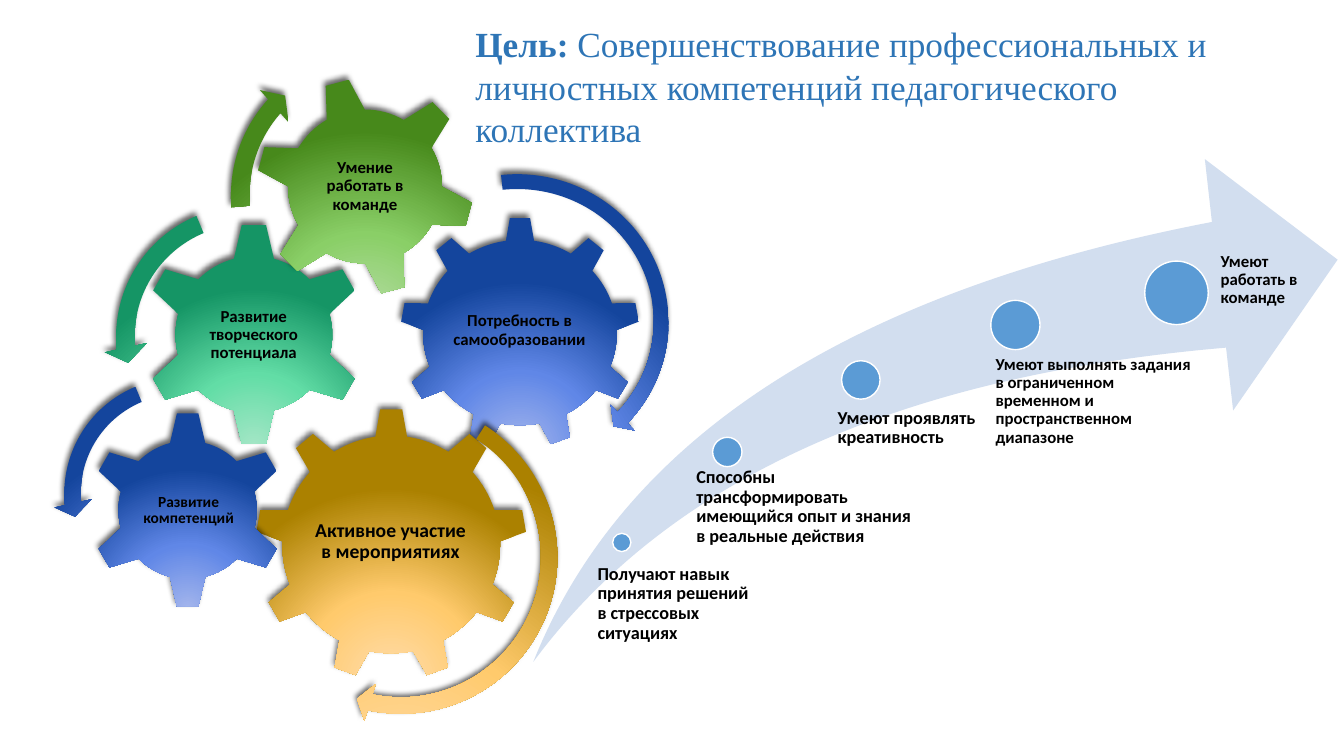
import pptx
import pptx.util
import pptx.dml.color
import pptx.enum.shapes
import pptx.enum.text
import pptx.oxml
import pptx.oxml.ns

Cm, Pt = pptx.util.Cm, pptx.util.Pt
RGB = pptx.dml.color.RGBColor.from_string
SHAPE = pptx.enum.shapes.MSO_SHAPE
ANCHOR = pptx.enum.text.MSO_ANCHOR
ALIGN = pptx.enum.text.PP_ALIGN

COLORS = {
    "title": "2E75B6", "text": "000000", "swoosh": "D2DEEF",
    "dot": "5B9BD5", "dot_edge": "FFFFFF", "shadow": "000000",
    "blue": ("A3B5EC", "6087E7", "14459D"),
    "teal": ("A4E6C6", "62DDA6", "159565"),
    "green": ("B7DDA7", "8ACF67", "47891B"),
    "gold": ("FFDCAB", "FFCA6C", "AB8100"),
}

presentation = pptx.Presentation()
presentation.slide_width, presentation.slide_height = Cm(33.87), Cm(19.05)
slide = presentation.slides.add_slide(presentation.slide_layouts[6])


def add_glossy(kind, box, tone, rotation=0, adjustments=()):
    """Add a shape with a radial gradient and a soft shadow."""
    glossy = slide.shapes.add_shape(kind, *map(Cm, box))
    glossy.rotation = rotation
    for index, value in enumerate(adjustments):
        glossy.adjustments[index] = value
    glossy.line.fill.background()
    stops = "".join(
        f'<a:gs pos="{pos}"><a:srgbClr val="{color}"/></a:gs>'
        for pos, color in zip((0, 46000, 100000), COLORS[tone]))
    namespace = pptx.oxml.ns.nsdecls("a")
    gradient = pptx.oxml.parse_xml(
        f'<a:gradFill {namespace} rotWithShape="1"><a:gsLst>{stops}</a:gsLst>'
        '<a:path path="circle"><a:fillToRect l="50000" t="155000" r="50000" b="-55000"/>'
        '</a:path></a:gradFill>')
    shadow = pptx.oxml.parse_xml(
        f'<a:effectLst {namespace}><a:outerShdw blurRad="50800" dist="38100" '
        f'dir="14700000" rotWithShape="0"><a:srgbClr val="{COLORS["shadow"]}">'
        '<a:alpha val="60000"/></a:srgbClr></a:outerShdw></a:effectLst>')
    properties = glossy._element.spPr
    properties.find(pptx.oxml.ns.qn("a:ln")).addprevious(gradient)
    properties.append(shadow)


def add_text(box, runs, size, margins, anchor=ANCHOR.TOP, align=ALIGN.LEFT,
             font="Calibri", color="text", spacing=0.9):
    """Add a wrapped text box; runs are (text, bold) pairs."""
    frame = slide.shapes.add_textbox(*map(Cm, box)).text_frame
    frame.word_wrap = True
    frame.vertical_anchor = anchor
    (frame.margin_left, frame.margin_top,
     frame.margin_right, frame.margin_bottom) = map(Cm, margins)
    paragraph = frame.paragraphs[0]
    paragraph.alignment = align
    paragraph.line_spacing = spacing
    for words, bold in runs:
        run = paragraph.add_run()
        run.text = words
        run.font.name, run.font.size, run.font.bold = font, Pt(size), bold
        run.font.color.rgb = RGB(COLORS[color])


# Title
add_text((11.73, 0.33, 19.53, 3.68),
         [("Цель: ", True),
          ("Совершенствование профессиональных и личностных компетенций "
           "педагогического коллектива", False)],
         25.2, (0.25, 0.13, 0.25, 0.13), ANCHOR.MIDDLE,
         font="Times New Roman", color="title", spacing=1)

# Two groups of gears with their labels, each followed by its arrows
wide_arrow = (SHAPE.CIRCULAR_ARROW, (0.047, 2.99, 25.34, 158.234, 0.055))
left_arrow = (SHAPE.LEFT_CIRCULAR_ARROW, (0.065, 4.3, 104.891, 148.378, 0.075))
short_arrow = (SHAPE.CIRCULAR_ARROW, (0.06, 3.941, 133.138, 105.082, 0.07))
long_arrow = (SHAPE.CIRCULAR_ARROW, (0.049, 3.126, 31.649, 151.913, 0.057))

upper_gears = [
    (SHAPE.GEAR_9, (10.08, 5.46, 6.05, 5.84), "blue", 0,
     "Потребность в самообразовании", (11.28, 6.83, 3.63, 3), 12),
    (SHAPE.GEAR_6, (3.58, 5.61, 5.64, 5.64), "teal", 0,
     "Развитие творческого потенциала", (5, 7.04, 2.79, 2.79), 12),
    (SHAPE.GEAR_6, (6.43, 1.93, 5.54, 5.54), "green", 345,
     "Умение работать в команде", (7.65, 3.15, 3.1, 3.1), 12),
]
upper_arrows = [
    (wide_arrow, (8.97, 4.14, 8.13, 7.95), "blue", 0),
    (left_arrow, (2.62, 4.88, 7.21, 7.21), "teal", 0),
    (short_arrow, (5.51, 1.02, 7.8, 7.8), "green", 0),
]
lower_gears = [
    (SHAPE.GEAR_9, (6.43, 10.29, 6.86, 6.86), "gold", 0,
     "Активное участие в мероприятиях", (7.8, 11.89, 4.09, 3.53), 14),
    (SHAPE.GEAR_6, (2.24, 10.36, 4.98, 4.98), "blue", 0,
     "Развитие компетенций", (3.51, 11.63, 2.49, 2.46), 11),
]
lower_arrows = [
    (long_arrow, (5.89, 9.83, 8.43, 8.43), "gold", 49.3),
    (left_arrow, (1.35, 9.25, 6.38, 6.38), "blue", 0),
]
for gears, arrows in ((upper_gears, upper_arrows), (lower_gears, lower_arrows)):
    for gear, box, tone, rotation, label, label_box, size in gears:
        add_glossy(gear, box, tone, rotation)
        add_text(label_box, [(label, True)], size, (0.05,) * 4,
                 ANCHOR.MIDDLE, ALIGN.CENTER)
    for (arrow, adjustments), box, tone, rotation in arrows:
        add_glossy(arrow, box, tone, rotation, adjustments)

# Rising arrow
swoosh = slide.shapes.add_shape(SHAPE.SWOOSH_ARROW, Cm(13.44), Cm(4.01), Cm(20.27), Cm(12.67))
swoosh.adjustments[0] = swoosh.adjustments[1] = 0.25
swoosh.shadow.inherit = False
swoosh.fill.solid()
swoosh.fill.fore_color.rgb = RGB(COLORS["swoosh"])
swoosh.line.fill.background()

# Results along the arrow: dot left, top, diameter; text, box, left inset, size
results = [
    (15.44, 13.44, 0.46, "Получают навык принятия решений в стрессовых ситуациях",
     (14.81, 14.22, 4.32, 3.02), 0.25, 13),
    (17.96, 11.02, 0.74,
     "Способны трансформировать имеющийся опыт и знания в реальные действия",
     (17.17, 11.79, 5.99, 5.31), 0.38, 13),
    (21.21, 9.09, 0.97, "Умеют проявлять креативность",
     (20.6, 10.29, 5.44, 7.11), 0.51, 13),
    (24.97, 7.57, 1.24,
     "Умеют выполнять задания в ограниченном временном и пространственном диапазоне",
     (24.43, 8.97, 5.89, 8.48), 0.66, 12),
    (28.85, 6.58, 1.6, "Умеют работать в команде",
     (29.92, 6.38, 3.78, 9.32), 0.84, 12),
]
for left, top, diameter, result, box, inset, size in results:
    dot = slide.shapes.add_shape(SHAPE.OVAL, Cm(left), Cm(top), Cm(diameter), Cm(diameter))
    dot.shadow.inherit = False
    dot.fill.solid()
    dot.fill.fore_color.rgb = RGB(COLORS["dot"])
    dot.line.color.rgb = RGB(COLORS["dot_edge"])
    dot.line.width = Pt(1)
    add_text(box, [(result, True)], size, (inset, 0, 0, 0))

presentation.save("out.pptx")
